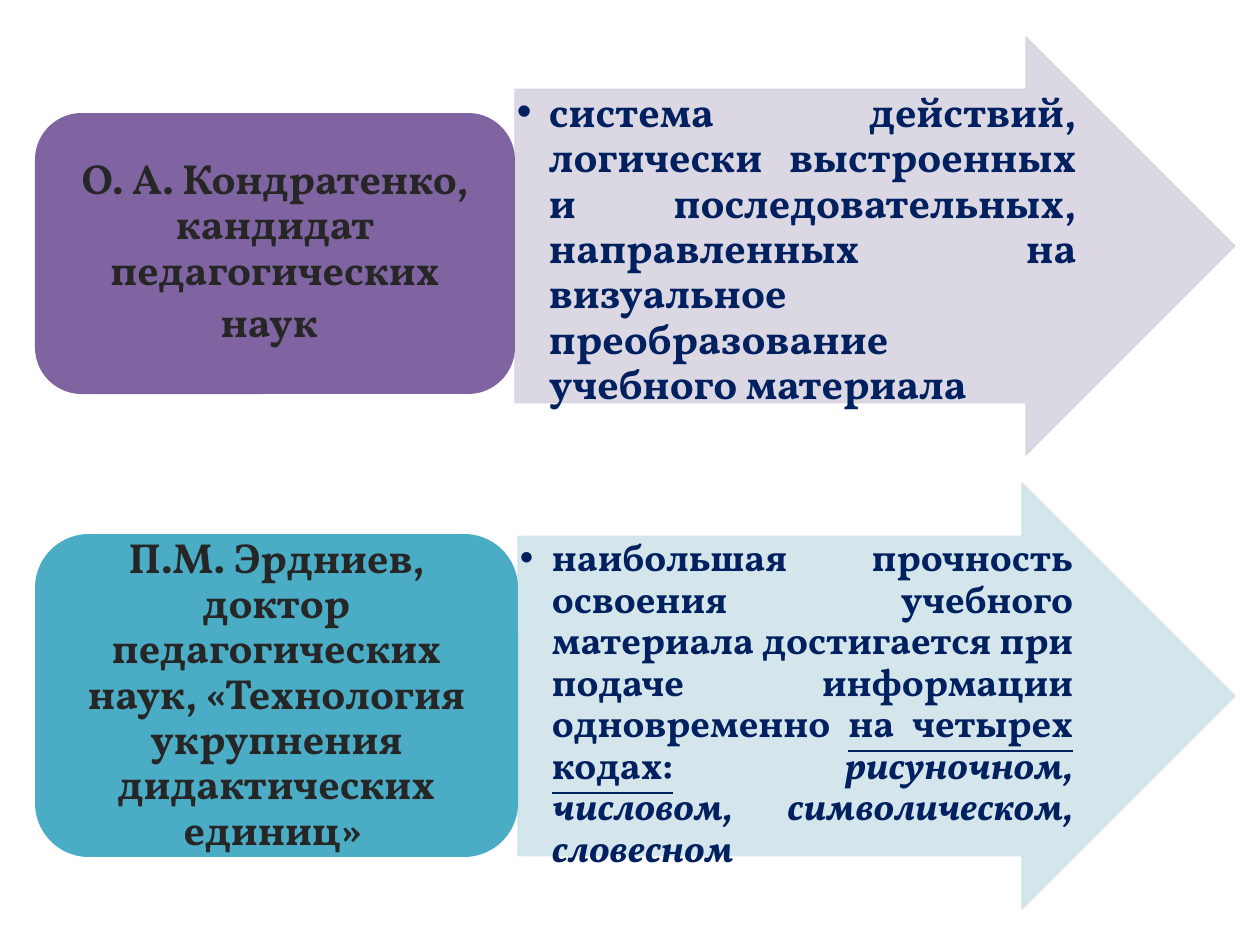
from dataclasses import dataclass
from lxml import etree
from pptx import Presentation
from pptx.dml.color import RGBColor
from pptx.enum.shapes import MSO_SHAPE
from pptx.enum.text import MSO_ANCHOR, MSO_AUTO_SIZE, PP_ALIGN
from pptx.oxml.ns import qn
from pptx.util import Pt

ARROW, CARD = MSO_SHAPE.RIGHT_ARROW, MSO_SHAPE.ROUNDED_RECTANGLE
TOP, MIDDLE = MSO_ANCHOR.TOP, MSO_ANCHOR.MIDDLE
CENTER, JUSTIFY = PP_ALIGN.CENTER, PP_ALIGN.JUSTIFY
FIXED = MSO_AUTO_SIZE.NONE
SCALE = 914400 / 126
WIDTH, HEIGHT = 1260, 945
LEFT, RIGHT = 35, 1235
HEAD = 0.375
CORNER = 0.0488


@dataclass(frozen=True)
class Theme:
    font: str = "Vollkorn"
    plain: str = "Calibri"
    navy: str = "002060"
    dark: str = "262626"
    violet: str = "8064A2"
    lilac: str = "D8D3E0"
    teal: str = "4BACC6"
    sky: str = "D0E3EA"
    label: int = 24
    gap: int = 29
    first: int = 24
    second: int = 22


THEME = Theme()
ROWS = [
    {
        "card": (113, 480, 281), "arrow": (37, 418),
        "fill": THEME.violet, "tint": THEME.lilac, "size": THEME.first,
        "label": [
            ("О. А. Кондратенко, кандидат педагогических наук", {}),
            (" ", {"size": Pt(THEME.gap), "name": THEME.plain, "bold": False}),
        ],
        "list": [
            ("система действий, логически выстроенных и последовательных, "
             "направленных на визуальное преобразование учебного материала", {}),
        ],
    },
    {
        "card": (534, 483, 323), "arrow": (483, 426),
        "fill": THEME.teal, "tint": THEME.sky, "size": THEME.second,
        "label": [
            ("П.М. Эрдниев, доктор педагогических наук, «Технология "
             "укрупнения дидактических единиц» ", {}),
        ],
        "list": [
            ("наибольшая прочность освоения учебного материала достигается "
             "при подаче информации одновременно ", {}),
            ("на четырех кодах:", {"underline": True}),
            (" ", {}),
            ("рисуночном, числовом, символическом, словесном", {"italic": True}),
        ],
    },
]


def px(num):
    return round(num * SCALE)


def apply(item, form):
    for key, value in form.items():
        setattr(item, key, value)


def fade(shape):
    for color in shape._element.spPr.iter(qn("a:srgbClr")):
        etree.SubElement(color, qn("a:alpha"), val="90000")


def add_block(slide, kind, area, color):
    shape = slide.shapes.add_shape(kind, *map(px, area))
    shape.shadow.inherit = False
    shape.fill.solid()
    shape.fill.fore_color.rgb = RGBColor.from_string(color)
    shape.line.fill.background()
    return shape


def add_arrow(slide, area, color):
    shape = add_block(slide, ARROW, area, color)
    shape.adjustments[0] = 0.75
    shape.adjustments[1] = 0.5
    shape.line.color.rgb = RGBColor.from_string(color)
    shape.line.width = Pt(0.75)
    fade(shape)


def write(frame, runs, size, color, align):
    para = frame.paragraphs[0]
    apply(para, {"alignment": align, "line_spacing": 0.9,
                 "space_before": Pt(0), "space_after": Pt(0)})
    for text, form in runs:
        run = para.add_run()
        run.text = text
        base = {"size": Pt(size), "name": THEME.font, "bold": True}
        apply(run.font, base | form)
        run.font.color.rgb = RGBColor.from_string(color)


def add_label(slide, area, runs):
    frame = slide.shapes.add_textbox(*map(px, area)).text_frame
    apply(frame, {"word_wrap": True, "auto_size": FIXED,
                  "vertical_anchor": MIDDLE})
    write(frame, runs, THEME.label, THEME.dark, CENTER)


def set_list(slide, body, area, runs, size):
    slide.shapes._spTree.append(body._element)
    apply(body, dict(zip(("left", "top", "width", "height"), map(px, area))))
    frame = body.text_frame
    edges = ("margin_left", "margin_top", "margin_right", "margin_bottom")
    apply(frame, dict.fromkeys(edges, px(2)))
    apply(frame, {"word_wrap": True, "auto_size": FIXED, "vertical_anchor": TOP})
    props = frame.paragraphs[0]._p.get_or_add_pPr()
    props.set("marL", str(px(32)))
    props.set("indent", str(px(-32)))
    etree.SubElement(props, qn("a:buChar"), char="•")
    write(frame, runs, size, THEME.navy, JUSTIFY)


def add_row(slide, body, row):
    top, wide, high = row["card"]
    peak, span = row["arrow"]
    start = LEFT + wide
    reach = RIGHT - start
    inset = round(high * CORNER)
    add_arrow(slide, (start, peak, reach, span), row["tint"])
    area = (start, peak + span / 8, reach - span * HEAD, span * 0.75)
    set_list(slide, body, area, row["list"], row["size"])
    add_block(slide, CARD, (LEFT, top, wide, high), row["fill"])
    area = (LEFT + inset, top + inset, wide - 2 * inset, high - 2 * inset)
    add_label(slide, area, row["label"])


def main():
    deck = Presentation()
    apply(deck, {"slide_width": px(WIDTH), "slide_height": px(HEIGHT)})
    slide = deck.slides.add_slide(deck.slide_layouts[3])
    title, *bodies = list(slide.placeholders)
    title._element.getparent().remove(title._element)
    for body, row in zip(bodies, ROWS):
        add_row(slide, body, row)
    deck.save("out.pptx")


if __name__ == "__main__":
    main()
